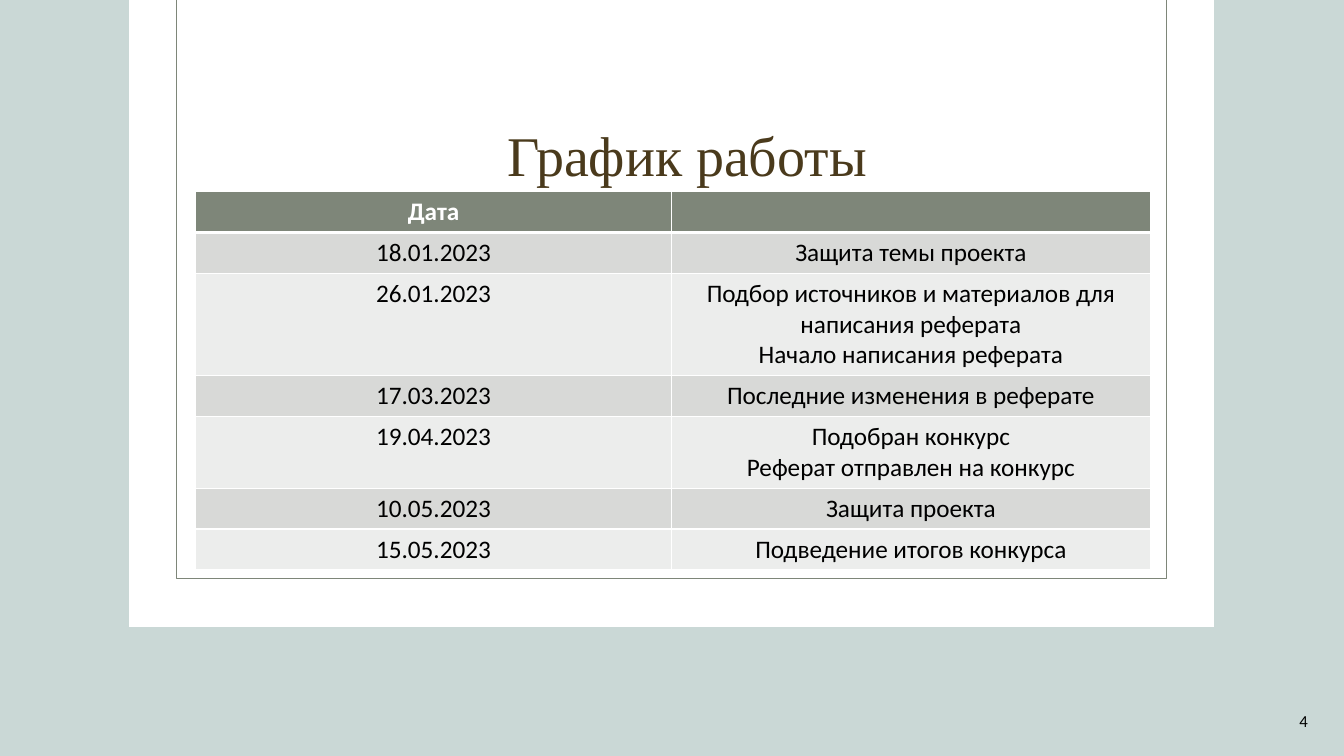
import pptx
import pptx.dml.color
import pptx.enum.shapes
import pptx.enum.text
import pptx.oxml
import pptx.oxml.ns
import pptx.util

Inches = pptx.util.Inches
Pt = pptx.util.Pt
RGBColor = pptx.dml.color.RGBColor
ALIGN = pptx.enum.text.PP_ALIGN
MIDDLE = pptx.enum.text.MSO_ANCHOR.MIDDLE
RECT = pptx.enum.shapes.MSO_SHAPE.RECTANGLE

MINT = RGBColor(0xCA, 0xD8, 0xD6)
WHITE = RGBColor(0xFF, 0xFF, 0xFF)
BLACK = RGBColor(0, 0, 0)
SAGE = RGBColor(0x7E, 0x86, 0x79)
BROWN = RGBColor(0x4A, 0x3A, 0x1C)
DARK = RGBColor(0xD8, 0xD9, 0xD7)
LIGHT = RGBColor(0xEC, 0xED, 0xEC)


def add_run(para, text, size, color, font="Calibri", bold=False):
    run = para.add_run()
    run.text = text
    run.font.size = Pt(size)
    run.font.name = font
    run.font.bold = bold
    run.font.color.rgb = color


def add_edge(cell, side, width):
    edge = pptx.oxml.parse_xml(
        f'<a:ln{side} {pptx.oxml.ns.nsdecls("a")} w="{Pt(width)}">'
        f'<a:solidFill><a:srgbClr val="{WHITE}"/></a:solidFill></a:ln{side}>')
    cell._tc.get_or_add_tcPr().append(edge)


deck = pptx.Presentation()
deck.slide_width = Inches(13.33)
deck.slide_height = Inches(7.5)
slide = deck.slides.add_slide(deck.slide_layouts[5])
shapes = slide.shapes
slide.background.fill.solid()
slide.background.fill.fore_color.rgb = MINT

# White sheet and its frame
sheet = shapes.add_shape(RECT, Inches(1.28), 0, Inches(10.76), Inches(6.22))
sheet.shadow.inherit = False
sheet.fill.solid()
sheet.fill.fore_color.rgb = WHITE
sheet.line.fill.background()

frame = shapes.add_shape(RECT, Inches(1.75), Inches(-0.01), Inches(9.82), Inches(5.75))
frame.shadow.inherit = False
frame.fill.background()
frame.line.color.rgb = SAGE
frame.line.width = Pt(1)

# Title, brought in front of the sheet
title = shapes.title
title.element.getparent().append(title.element)
title.left, title.top = Inches(2.06), Inches(0.85)
title.width, title.height = Inches(9.51), Inches(1.45)
title.text_frame.vertical_anchor = MIDDLE
para = title.text_frame.paragraphs[0]
para.alignment = ALIGN.CENTER
para.line_spacing = 0.9
add_run(para, "График работы", 40, BROWN, "Times New Roman")

# Schedule: date, lines of work, row height
plan = [
    ("Дата", [], 0.39),
    ("18.01.2023", ["Защита темы проекта"], 0.39),
    ("26.01.2023", ["Подбор источников и материалов для написания реферата",
                    "Начало написания реферата"], 0.98),
    ("17.03.2023", ["Последние изменения в реферате"], 0.39),
    ("19.04.2023", ["Подобран конкурс", "Реферат отправлен на конкурс"], 0.69),
    ("10.05.2023", ["Защита проекта"], 0.39),
    ("15.05.2023", ["Подведение итогов конкурса"], 0.39),
]
table = shapes.add_table(len(plan), 2, Inches(1.94), Inches(1.9),
                         Inches(9.47), Inches(3.7)).table
table.columns[0].width = Inches(4.72)
table.columns[1].width = Inches(4.75)

for row, (date, work, height) in enumerate(plan):
    table.rows[row].height = Inches(height)
    head = row == 0
    for col, lines in enumerate([[date], work]):
        cell = table.cell(row, col)
        for side in "LRTB":
            thick = (head and side == "B") or (row == 1 and side == "T")
            add_edge(cell, side, 3 if thick else 1)
        cell.fill.solid()
        cell.fill.fore_color.rgb = SAGE if head else DARK if row % 2 else LIGHT
        for num, line in enumerate(lines):
            text = cell.text_frame
            para = text.add_paragraph() if num else text.paragraphs[0]
            para.alignment = ALIGN.CENTER
            add_run(para, line, 18, WHITE if head else BLACK, bold=head)

# Slide number
box = shapes.add_textbox(Inches(10.07), Inches(6.95), Inches(3), Inches(0.4))
box.text_frame.word_wrap = True
box.text_frame.vertical_anchor = MIDDLE
para = box.text_frame.paragraphs[0]
para.alignment = ALIGN.RIGHT
add_run(para, "4", 12, BLACK)

deck.save("out.pptx")
